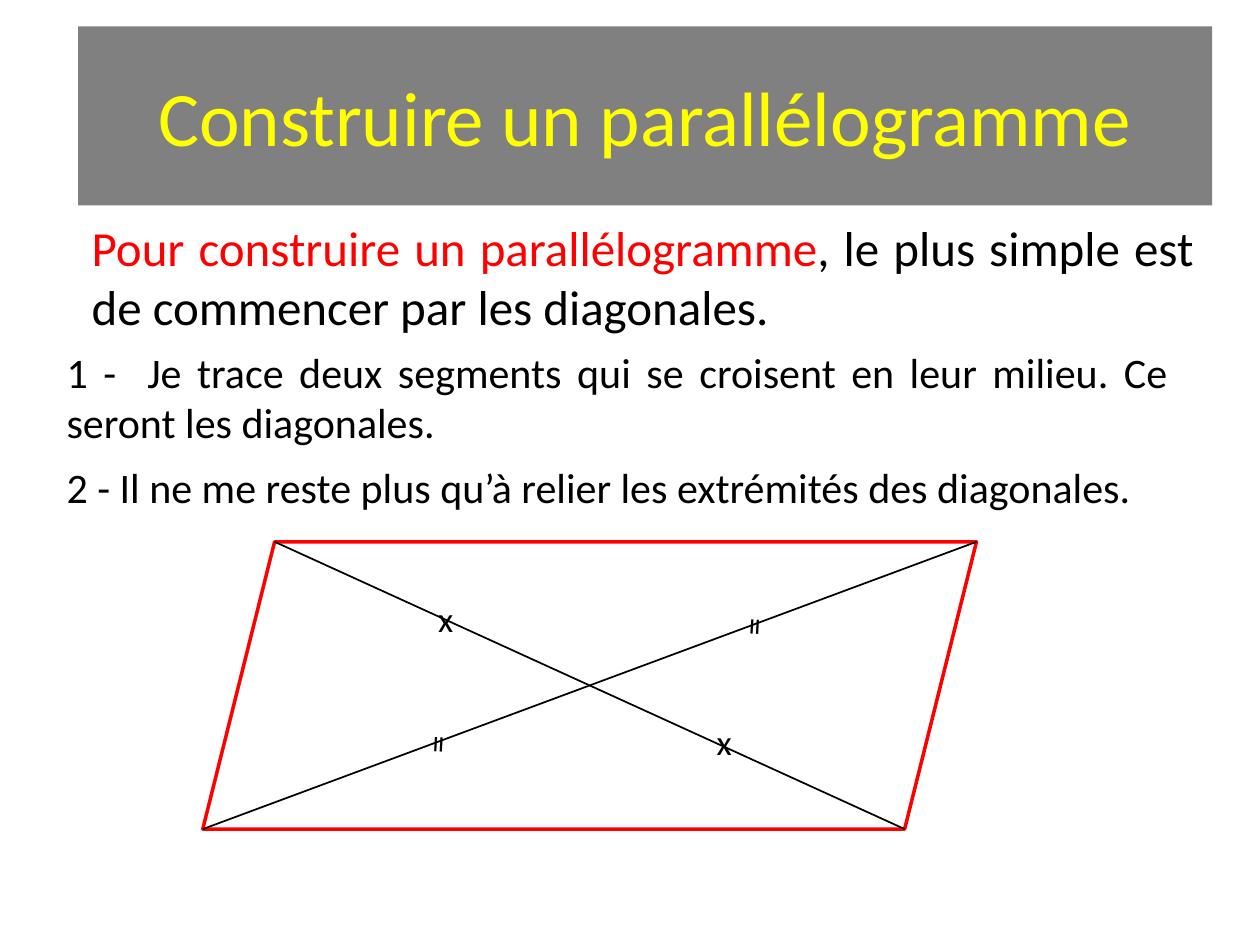
"""Build a slide on drawing a parallelogram from its diagonals."""
from pptx import Presentation, util as u
from pptx.dml.color import RGBColor
from pptx.enum import shapes, text
from pptx.oxml.ns import qn
from lxml import etree

HUES = {"gray": "808080", "gold": "FFFF00", "red": "FF0000", "ink": "000000", "white": "FFFFFF"}
ALIGN = text.PP_ALIGN


def hue(name):
    return RGBColor.from_string(HUES[name])


def write(frame, *runs, size=24, align=ALIGN.LEFT, before=0, grow=True):
    frame.word_wrap = True
    frame.auto_size = text.MSO_AUTO_SIZE.SHAPE_TO_FIT_TEXT if grow else text.MSO_AUTO_SIZE.NONE
    para = frame.paragraphs[0]
    para.alignment, para.space_before = align, u.Pt(before)
    for words, color in runs:
        run = para.add_run()
        run.text = words
        run.font.name, run.font.size = "Calibri", u.Pt(size)
        run.font.color.rgb = hue(color)


class Board:
    """Hold the style and slide, with lengths on a grid of 100 columns by 75 rows."""

    def __init__(self, deck):
        self.cell = deck.slide_width / 100
        self.slide = deck.slides.add_slide(deck.slide_layouts[6])

    def grid(self, *cells):
        return [u.Emu(round(n * self.cell)) for n in cells]

    def block(self, kind, box, fill, line=None, width=2):
        shape = self.slide.shapes.add_shape(kind, *self.grid(*box))
        shape.shadow.inherit = False
        shape.fill.solid()
        shape.fill.fore_color.rgb = hue(fill)
        if line:
            shape.line.color.rgb = hue(line)
            shape.line.width = u.Pt(width)
        else:
            shape.line.fill.background()
        return shape

    def label(self, box, *runs, turn=0, **style):
        shape = self.slide.shapes.add_textbox(*self.grid(*box))
        shape.rotation = turn
        write(shape.text_frame, *runs, **style)

    def line(self, start, end):
        kind = shapes.MSO_CONNECTOR.STRAIGHT
        link = self.slide.shapes.add_connector(kind, *self.grid(*start, *end))
        link.line.color.rgb = hue("ink")
        link.line.width = u.Pt(1)
        etree.SubElement(link._element.spPr, qn("a:effectLst"))


def main():
    deck = Presentation()
    deck.slide_width, deck.slide_height = u.Inches(10), u.Inches(7.5)
    board = Board(deck)
    kinds = shapes.MSO_SHAPE

    title = board.block(kinds.RECTANGLE, (6.2, 2.1, 90, 14.2), "gray")
    title.text_frame.vertical_anchor = text.MSO_ANCHOR.MIDDLE
    write(title.text_frame, ("Construire un parallélogramme", "gold"),
          size=44, align=ALIGN.CENTER, grow=False)
    board.label((6.3, 16.8, 89.4, 10.5), ("Pour construire un parallélogramme", "red"),
                (", le plus simple est de commencer par les diagonales.", "ink"),
                size=28, align=ALIGN.JUSTIFY, before=5.6, grow=False)
    board.label((4.3, 27, 89.4, 9.1),
                ("1 -  Je trace deux segments qui se croisent en leur milieu. "
                 "Ce seront les diagonales.", "ink"), align=ALIGN.JUSTIFY)
    board.label((4.3, 36.1, 89.4, 5),
                ("2 - Il ne me reste plus qu’à relier les extrémités des diagonales.", "ink"))

    left, top, wide, high = 16.1, 43, 61.4, 22.8
    right, base, lean = left + wide, top + high, high / 4
    board.block(kinds.PARALLELOGRAM, (left, top, wide, high), "white", "red")
    board.line((left + lean, top), (right - lean, base))
    board.line((left, base), (right, top))
    for mark, x, y, turn in (("x", 33.8, 46.9, 0), ("x", 55.9, 56.7, 0),
                             ("=", 32.8, 57.4, 93.1), ("=", 57.6, 47.1, 273.4)):
        board.label((x, y, 4.3, 4.4), (mark, "ink"), size=20, turn=turn)
    deck.save("out.pptx")


if __name__ == "__main__":
    main()
